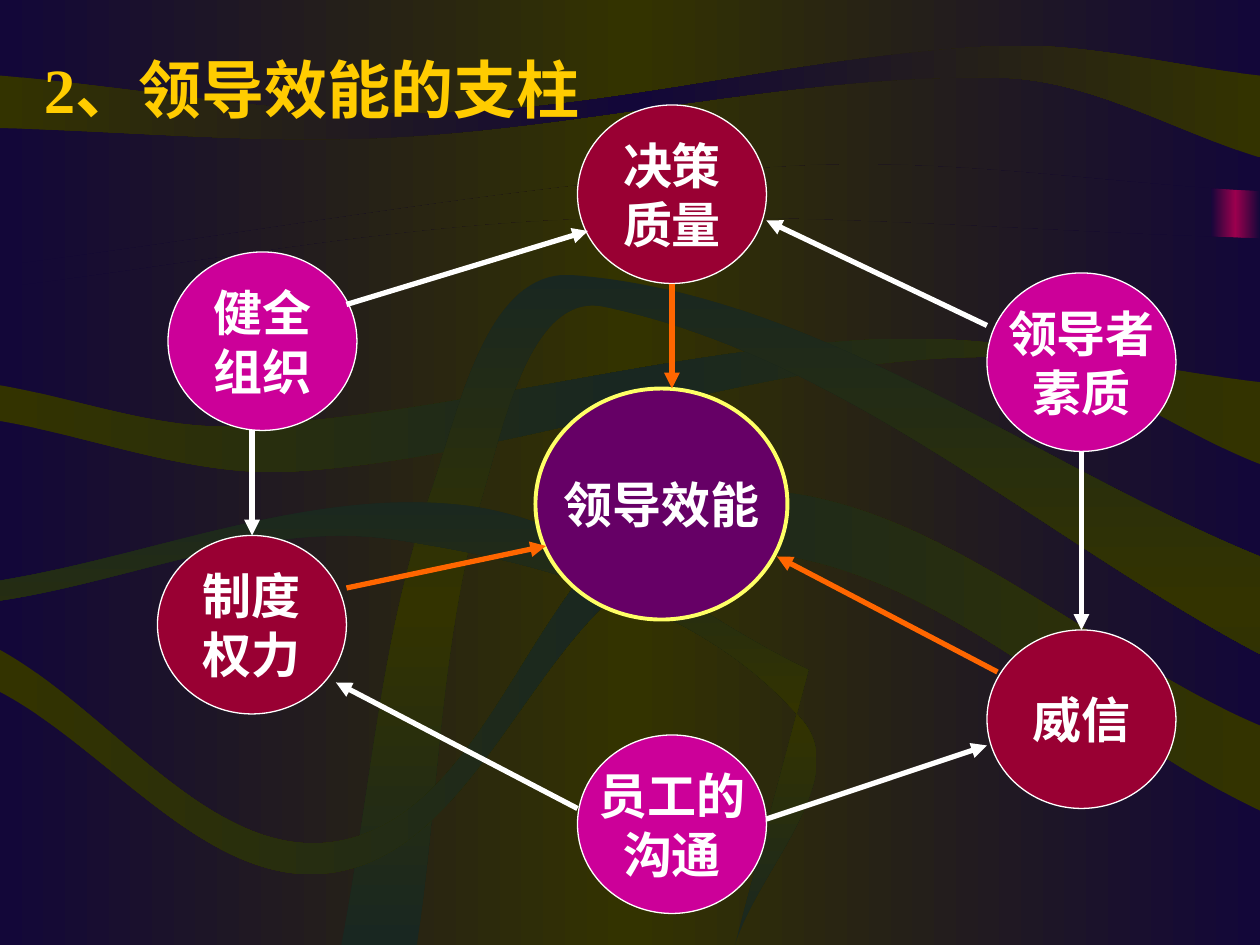
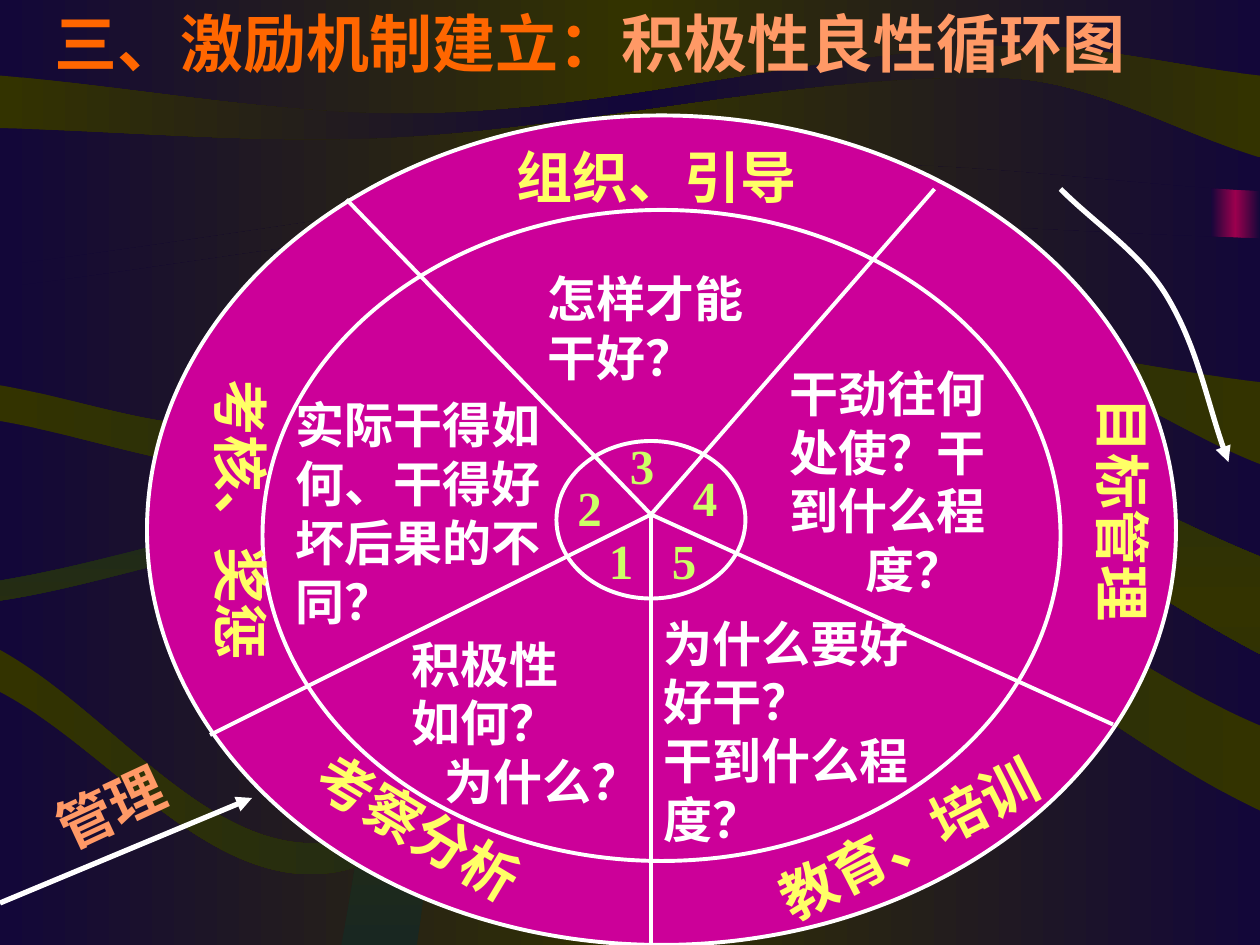
"""Builds two slides on leadership effectiveness and the motivation cycle."""
import copy
import itertools
import math

from lxml import etree
from pptx import Presentation
from pptx.dml import color
from pptx.enum import shapes, text
from pptx.oxml import ns
from pptx.util import Emu, Pt

PX = 7620
FONT = "Times New Roman"
NAVY, OLIVE, TEAL, WINE = "130739", "333300", "192721", "9C004E"
MAGENTA, CRIMSON, PURPLE = "CC0099", "990033", "660066"
WHITE, YELLOW, LIME = "FFFFFF", "FFFF66", "CCFF66"
GOLD, ORANGE, PEACH = "FFCC00", "FF6600", "FF9966"
LEFT, CENTER, JUSTIFY = (text.PP_ALIGN.LEFT, text.PP_ALIGN.CENTER,
                         text.PP_ALIGN.JUSTIFY)
W, H = 1200, 900
rgb = color.RGBColor.from_string


def style(frame, size, align, *colours):
    for paragraph in frame.paragraphs:
        paragraph.alignment = align
        for run, colour in zip(paragraph.runs, itertools.cycle(colours)):
            run.font.name, run.font.size, run.font.bold = FONT, Pt(size), True
            run.font.color.rgb = rgb(colour)


def draw_smooth(slide, edges, closed):
    builder = slide.shapes.build_freeform(*edges[0][0], scale=PX)
    for edge in edges:
        if edge is not edges[0]:
            builder.add_line_segments(edge[:1], close=False)
        ends = [edge[0], *edge, edge[-1]]
        turns = [math.atan2(after[1] - before[1], after[0] - before[0])
                 for before, after in zip(ends, ends[2:])]
        for i, (a, b) in enumerate(itertools.pairwise(edge)):
            reach = math.dist(a, b) / 3
            handles = [(x + reach * math.cos(turn), y + reach * math.sin(turn))
                       for (x, y), turn in ((a, turns[i]),
                                            (b, turns[i + 1] + math.pi))]
            builder.add_line_segments([*handles, b], close=False)
    if closed:
        builder.add_line_segments([], close=True)
    outline = builder.convert_to_shape()
    outline.shadow.inherit = False
    steps = iter(outline.element.xpath(".//a:lnTo"))
    for edge in edges:
        if edge is not edges[0]:
            next(steps)
        for corner in edge[1:]:
            curve = next(steps)
            curve.tag = ns.qn("a:cubicBezTo")
            for extra in (next(steps), next(steps)):
                curve.append(extra[0])
                extra.getparent().remove(extra)
    return outline


prs = Presentation()
prs.slide_width, prs.slide_height = Emu(W * PX), Emu(H * PX)
blank = prs.slide_layouts[6]
pillars, cycle = prs.slides.add_slide(blank), prs.slides.add_slide(blank)

waves = [
    ([(0, 0), (W, 0)], [(0, 253), (750, 158), (W, 182)], NAVY, OLIVE, 0),
    ([(0, 274), (550, 209), (W, 227)], [(0, H), (W, H)], NAVY, OLIVE, 0),
    ([(0, 72), (414, 108), (950, 44), (W, 72)],
     [(0, 122), (370, 131), (953, 74), (W, 150)], OLIVE, NAVY, 0),
    ([(0, 367), (228, 406), (841, 323), (W, 364)],
     [(0, 401), (280, 449), (936, 340), (W, 442)], OLIVE, TEAL, 0),
    ([(325, H), (410, 470), (545, 262), (W, 530)],
     [(397, H), (460, 470), (575, 292), (W, 623)], TEAL, OLIVE, 90),
    ([(0, 619), (328, 800), (674, 469), (W, 691)],
     [(0, 659), (323, 830), (678, 526), (W, 772)], OLIVE, TEAL, 0),
    ([(0, 553), (439, 481), (770, 638)],
     [(0, 572), (377, 514), (764, 686), (700, H)], TEAL, OLIVE, 90),
]
master = prs.slide_master
ribbon = pillars.shapes.add_shape(
    shapes.MSO_SHAPE.RECTANGLE, *[Emu(v * PX) for v in (1153, 59, 47, 414)])
ribbon.shadow.inherit = False
backdrop = [(ribbon, NAVY, WINE, 0)]
for upper, lower, edge, middle, angle in waves:
    wave = draw_smooth(pillars, [upper, lower[::-1]], True)
    backdrop.append((wave, edge, middle, angle))
paints = [(master.background.fill, master.element.cSld.bg, NAVY, OLIVE, 0)]
for number, (part, edge, middle, angle) in enumerate(backdrop, 100):
    part.line.fill.background()
    part.element.nvSpPr.cNvPr.set("id", str(number))
    master.shapes.element.append(part.element)
    paints.append((part.fill, part.element, edge, middle, angle))
for fill, owner, edge, middle, angle in paints:
    fill.gradient()
    fill.gradient_angle = angle
    for stop, colour in zip(fill.gradient_stops, (edge, middle)):
        stop.color.rgb = rgb(colour)
    stops = next(owner.iter(ns.qn("a:gsLst")))
    stops[1].set("pos", "50000")
    last = copy.deepcopy(stops[0])
    last.set("pos", "100000")
    stops.append(last)

titles = [
    (pillars, (30, 30, 550, 100), 1.1, [("2、领导效能的支柱", GOLD)]),
    (cycle, (40, 0, 1130, 80), 1.0,
     [("三、激励机制建立：", ORANGE), ("积极性良性循环图", PEACH)]),
]
for slide, box, spacing, parts in titles:
    frame = slide.shapes.add_textbox(*[Emu(v * PX) for v in box]).text_frame
    frame.word_wrap = True
    frame.auto_size = text.MSO_AUTO_SIZE.NONE
    frame.vertical_anchor = text.MSO_ANCHOR.MIDDLE
    heading = frame.paragraphs[0]
    heading.line_spacing = spacing
    for words, colour in parts:
        heading.add_run().text = words
    style(frame, 36, JUSTIFY, *[colour for words, colour in parts])

circles = [(pillars, "领导效能", (510, 370, 240, 220), PURPLE, YELLOW, 2.25)]
for ring in ((140, 110, 980, 790), (250, 200, 760, 620), (530, 420, 180, 150)):
    circles.append((cycle, "", ring, MAGENTA, WHITE, 2.25))
factors = [
    ("健全\n组织", 160, 240, MAGENTA),
    ("制度\n权力", 150, 510, CRIMSON),
    ("员工的\n沟通", 550, 700, MAGENTA),
    ("决策\n质量", 550, 100, CRIMSON),
    ("领导者\n素质", 940, 260, MAGENTA),
    ("威信", 940, 600, CRIMSON),
]
for words, x, y, colour in factors:
    circles.append((pillars, words, (x, y, 180, 170), colour, WHITE, 0.75))
for slide, words, box, colour, rim, width in circles:
    circle = slide.shapes.add_shape(shapes.MSO_SHAPE.OVAL,
                                    *[Emu(v * PX) for v in box])
    circle.shadow.inherit = False
    circle.fill.solid()
    circle.fill.fore_color.rgb = rgb(colour)
    circle.line.color.rgb = rgb(rim)
    circle.line.width = Pt(width)
    if words:
        circle.text_frame.text = words
        circle.text_frame.word_wrap = False
        circle.text_frame.vertical_anchor = text.MSO_ANCHOR.MIDDLE
        style(circle.text_frame, 28, CENTER, WHITE)

influences = [
    ((730, 780), (940, 710)), ((550, 770), (320, 650)),
    ((240, 410), (240, 510)), ((330, 290), (560, 220)),
    ((940, 310), (730, 210)), ((1030, 430), (1030, 600)),
]
supports = [((330, 560), (520, 520)), ((950, 640), (740, 530)),
            ((640, 270), (640, 370))]
hub = (620, 490)
rim_points = [(330, 190), (890, 180), (620, H), (200, 700), (1060, 690)]
strokes = [(pillars, *ends, WHITE, 3, True) for ends in influences]
strokes += [(pillars, *ends, ORANGE, 3, True) for ends in supports]
strokes += [(cycle, hub, point, WHITE, 2.25, False) for point in rim_points]
strokes.append((cycle, (0, 860), (240, 760), WHITE, 3, True))
sweep = draw_smooth(cycle, [[(1010, 180), (1110, 280), (1170, 440)]], False)
sweep.fill.background()
drawn = [(sweep, WHITE, 3, True)]
for slide, begin, end, colour, width, arrowed in strokes:
    stroke = slide.shapes.add_connector(shapes.MSO_CONNECTOR.STRAIGHT,
                                        *[Emu(v * PX) for v in begin + end])
    etree.SubElement(stroke.element.spPr, ns.qn("a:effectLst"))
    drawn.append((stroke, colour, width, arrowed))
for stroke, colour, width, arrowed in drawn:
    stroke.line.color.rgb = rgb(colour)
    stroke.line.width = Pt(width)
    if arrowed:
        etree.SubElement(stroke.element.spPr.find(ns.qn("a:ln")),
                         ns.qn("a:tailEnd"), type="triangle")

numbers = [("1", 568, 499), ("5", 628, 499), ("2", 538, 449),
           ("3", 588, 409), ("4", 648, 439)]
actions = [
    ("组织、引导", (480, 130, 320, 76), YELLOW, 0),
    ("考核、奖惩", (180, 330, 88, 330), YELLOW, 0),
    ("考察分析", (280, 750, 239, 76), YELLOW, 31),
    ("教育、培训", (720, 760, 292, 76), YELLOW, 333),
    ("目标管理", (1020, 350, 88, 270), YELLOW, 0),
    ("管理", (40, 730, 131, 76), PEACH, 335),
]
questions = [
    ("实际干得如何、干得好坏后果的不同？", (270, 370, 280, 236), 0),
    ("怎样才能干好？", (510, 250, 242, 124), 0),
    ("干劲往何处使？干到什么程\n度？", (740, 340, 250, 236), 73),
    ("积极性\n如何？\n为什么？", (380, 598, 220, 180), 32),
    ("为什么要好好干？\n干到什么程度？", (620, 578, 290, 236), 0),
]
labels = [(words, (x, y, 48, 68), LIME, 28, 0, False, 0)
          for words, x, y in numbers]
labels += [(words, box, colour, 32, turn, turn == 0, 0)
           for words, box, colour, turn in actions]
labels += [(words, box, WHITE, 28, 0, True, indent)
           for words, box, indent in questions]
for words, box, colour, size, turn, wrap, indent in labels:
    label = cycle.shapes.add_textbox(*[Emu(v * PX) for v in box])
    label.rotation = turn
    frame = label.text_frame
    frame.text = words
    frame.word_wrap = wrap
    frame.auto_size = text.MSO_AUTO_SIZE.SHAPE_TO_FIT_TEXT
    upright = wrap and box[3] > 2 * box[2]
    if upright:
        label.element.txBody.bodyPr.set("vert", "vert")
    if indent:
        last_line = frame.paragraphs[-1]
        last_line._p.get_or_add_pPr().set("marL", str(indent * PX))
    style(frame, size, CENTER if upright else LEFT, colour)

prs.save("out.pptx")
